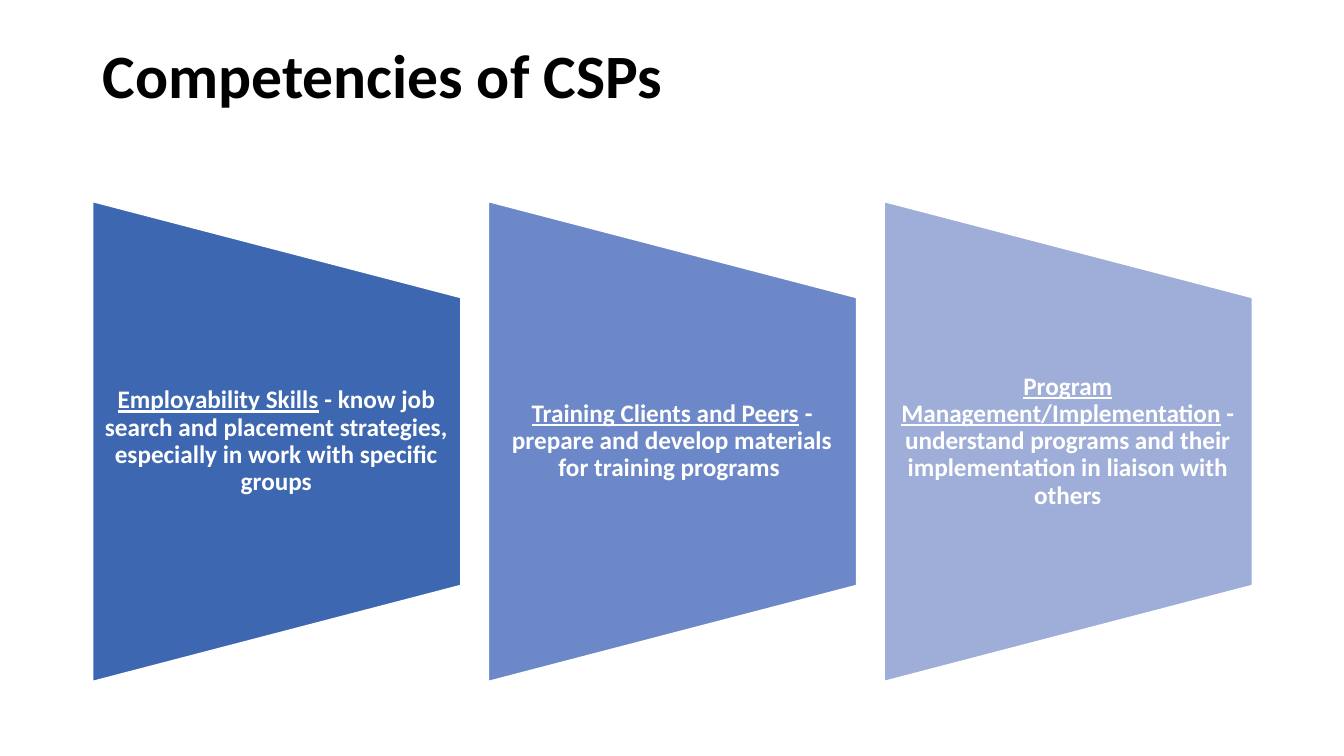
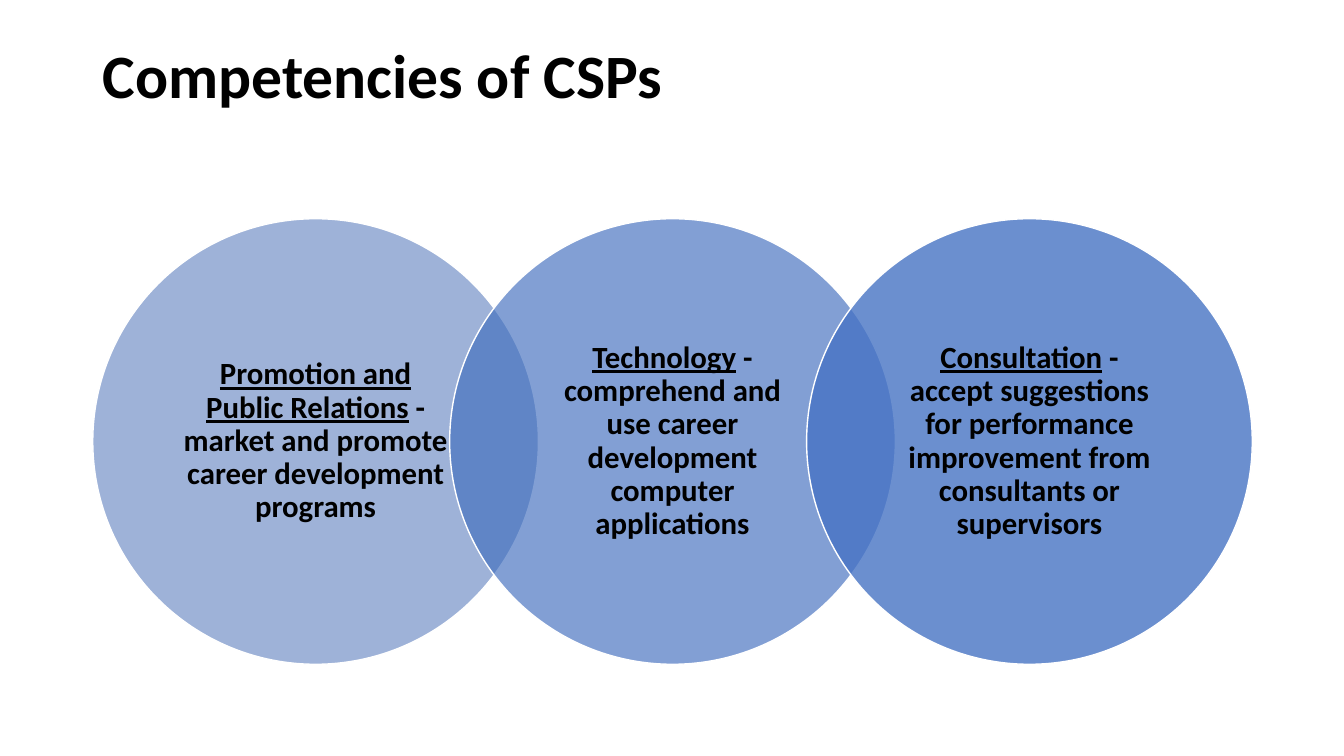
"""Build two slides on the competencies of CSPs."""
from dataclasses import dataclass

from lxml import etree
from pptx import Presentation
from pptx.dml.color import RGBColor
from pptx.enum import shapes, text
from pptx.oxml.ns import qn
from pptx.util import Inches, Pt

FONT = "Calibri"
BLACK = RGBColor(0x00, 0x00, 0x00)
WHITE = RGBColor(0xFF, 0xFF, 0xFF)
DEEP_BLUE = RGBColor(0x3E, 0x67, 0xB2)
MID_BLUE = RGBColor(0x6C, 0x88, 0xC8)
PALE_BLUE = RGBColor(0x9F, 0xAE, 0xD8)
ROYAL_BLUE = RGBColor(0x3F, 0x6D, 0xBD)
BRIGHT_BLUE = RGBColor(0x46, 0x73, 0xC4)

TITLE = "Competencies of CSPs"
LEFT, SPAN, MIDDLE = 0.92, 11.5, 4.38
PANEL_WIDTH, PANEL_HEIGHT, PANEL_TEXT_HEIGHT = 3.65, 4.76, 2.86
CIRCLE_SIZE = 4.42


@dataclass(frozen=True)
class Competency:
    """A named skill, its explanation and the colour behind it."""

    name: str
    detail: str
    color: RGBColor
    opacity: int = 100


PANELS = [
    Competency("Employability Skills",
               " - know job search and placement strategies, especially in work with specific groups",
               DEEP_BLUE),
    Competency("Training Clients and Peers",
               " - prepare and develop materials for training programs ",
               MID_BLUE),
    Competency("Program Management/Implementation",
               " - understand programs and their implementation in liaison with others",
               PALE_BLUE),
]
CIRCLES = [
    Competency("Promotion and Public Relations",
               " - market and promote career development programs",
               DEEP_BLUE, 50),
    Competency("Technology",
               " - comprehend and use career development computer applications",
               ROYAL_BLUE, 65),
    Competency("Consultation",
               " - accept suggestions for performance improvement from consultants or supervisors",
               BRIGHT_BLUE, 80),
]


def spread(count: int, width: float) -> list[float]:
    """Return the left edges of equal items spread over the content width."""
    step = (SPAN - width) / (count - 1)
    return [LEFT + index * step for index in range(count)]


def style_paragraph(paragraph, size: int, color: RGBColor) -> None:
    """Apply the shared bold type style."""
    paragraph.line_spacing = 0.9
    paragraph.font.name = FONT
    paragraph.font.size = Pt(size)
    paragraph.font.bold = True
    paragraph.font.color.rgb = color


def write_competency(frame, item: Competency, size: int, color: RGBColor,
                     insets: tuple[float, float, float, float]) -> None:
    """Write an underlined name and its explanation, centred."""
    frame.word_wrap = True
    frame.vertical_anchor = text.MSO_ANCHOR.MIDDLE
    (frame.margin_left, frame.margin_top,
     frame.margin_right, frame.margin_bottom) = map(Inches, insets)
    paragraph = frame.paragraphs[0]
    paragraph.alignment = text.PP_ALIGN.CENTER
    style_paragraph(paragraph, size, color)
    name = paragraph.add_run()
    name.text = item.name
    name.font.underline = True
    paragraph.add_run().text = item.detail


def add_figure(slide, kind, left: float, width: float, height: float, item: Competency):
    """Add a white-edged shape centred on the content's middle line."""
    figure = slide.shapes.add_shape(kind, Inches(left), Inches(MIDDLE - height / 2),
                                    Inches(width), Inches(height))
    figure.shadow.inherit = False
    figure.fill.solid()
    figure.fill.fore_color.rgb = item.color
    figure.line.color.rgb = WHITE
    figure.line.width = Pt(1)
    if item.opacity < 100:
        color = figure.fill._xPr.find(qn("a:solidFill")).find(qn("a:srgbClr"))
        etree.SubElement(color, qn("a:alpha")).set("val", str(item.opacity * 1000))
    return figure


def add_titled_slide(deck):
    """Add a blank slide carrying the shared title."""
    slide = deck.slides.add_slide(deck.slide_layouts[6])
    title = slide.shapes.add_textbox(Inches(LEFT), Inches(0.4), Inches(SPAN), Inches(1.45))
    title.text_frame.word_wrap = True
    title.text_frame.text = TITLE
    style_paragraph(title.text_frame.paragraphs[0], 44, BLACK)
    return slide


def add_panel(slide, left: float, item: Competency) -> None:
    """Add a trapezoid turned on its side with upright text."""
    panel = add_figure(slide, shapes.MSO_SHAPE.FLOWCHART_MANUAL_OPERATION,
                       left + (PANEL_WIDTH - PANEL_HEIGHT) / 2,
                       PANEL_HEIGHT, PANEL_WIDTH, item)
    panel.rotation = 270
    label = slide.shapes.add_textbox(
        Inches(left), Inches(MIDDLE - PANEL_TEXT_HEIGHT / 2),
        Inches(PANEL_WIDTH), Inches(PANEL_TEXT_HEIGHT))
    write_competency(label.text_frame, item, 18, WHITE, (0.12, 0, 0.13, 0))


def add_circle(slide, left: float, item: Competency) -> None:
    """Add a translucent circle with its text inside."""
    circle = add_figure(slide, shapes.MSO_SHAPE.OVAL, left, CIRCLE_SIZE, CIRCLE_SIZE, item)
    write_competency(circle.text_frame, item, 22, BLACK, (0.24, 0.03, 0.24, 0.03))


def main() -> None:
    """Build and save the deck."""
    deck = Presentation()
    deck.slide_width, deck.slide_height = Inches(13.33), Inches(7.5)
    for items, width, add_item in ((PANELS, PANEL_WIDTH, add_panel),
                                   (CIRCLES, CIRCLE_SIZE, add_circle)):
        slide = add_titled_slide(deck)
        for left, item in zip(spread(len(items), width), items):
            add_item(slide, left, item)
    deck.save("out.pptx")


if __name__ == "__main__":
    main()
